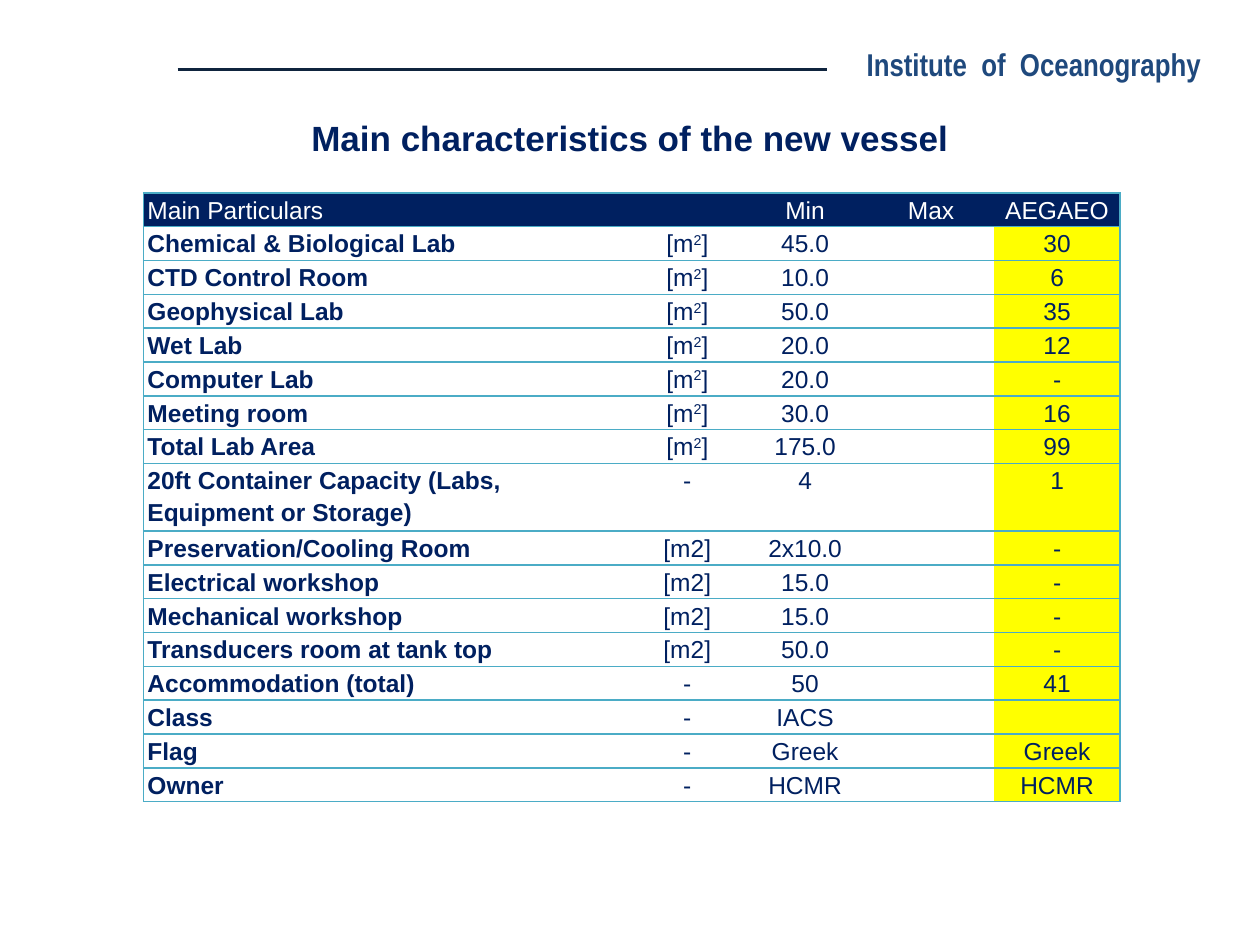
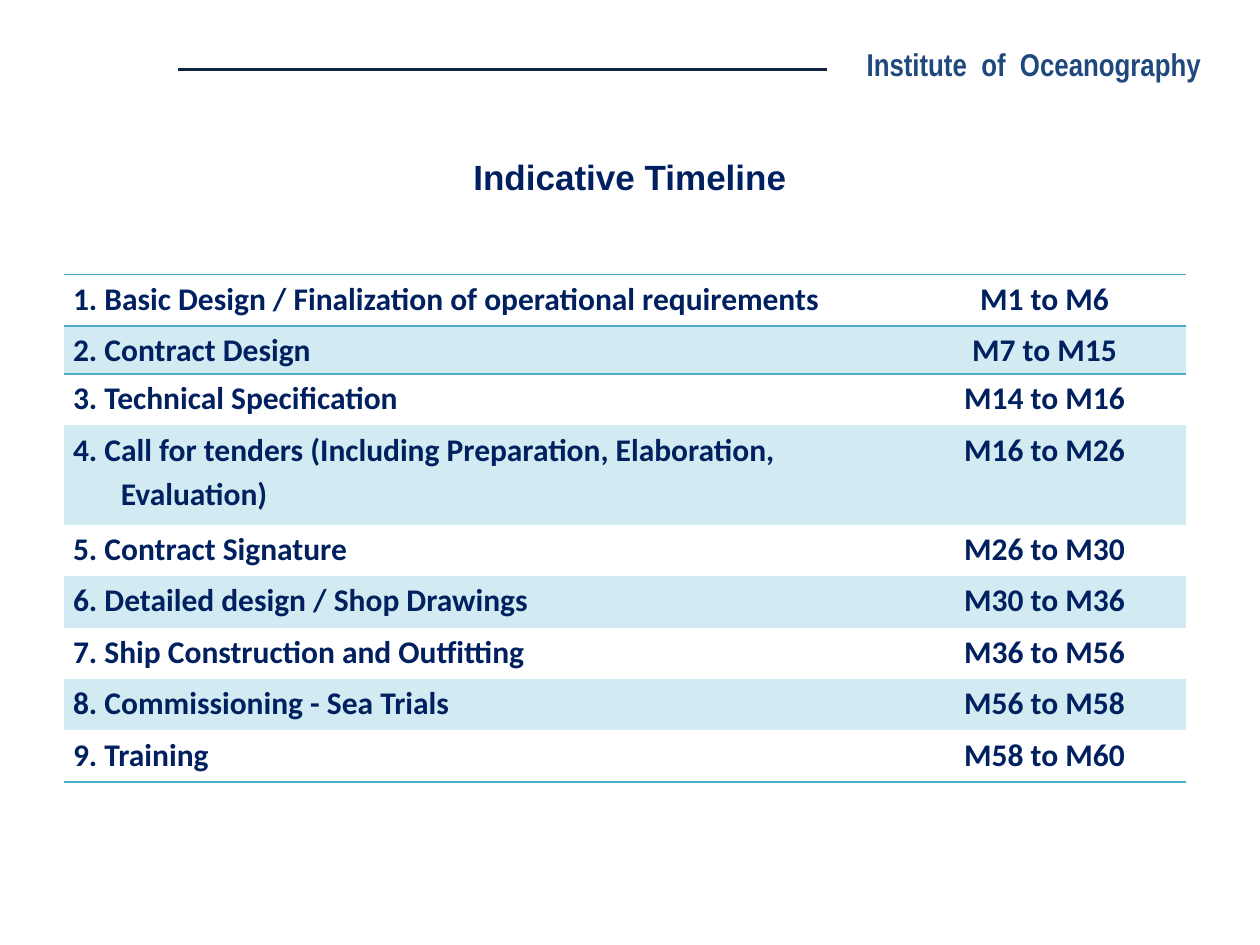
from dataclasses import dataclass

from lxml import etree
from pptx import Presentation
from pptx.dml.color import RGBColor
from pptx.enum.shapes import MSO_CONNECTOR
from pptx.enum.text import MSO_ANCHOR, MSO_AUTO_SIZE, PP_ALIGN
from pptx.oxml.ns import qn
from pptx.slide import Slide
from pptx.util import Inches, Pt

LEFT, CENTER = PP_ALIGN.LEFT, PP_ALIGN.CENTER
MIDDLE = MSO_ANCHOR.MIDDLE
GROW, FIXED = MSO_AUTO_SIZE.SHAPE_TO_FIT_TEXT, MSO_AUTO_SIZE.NONE
STRAIGHT = MSO_CONNECTOR.STRAIGHT

WIDTH, HEIGHT = Inches(10), Inches(7.5)
COLUMN, ROW = WIDTH / 100, HEIGHT / 75  # the slide is a grid of 100 by 75
LINE_SPACING = 1.15
PLAIN_TABLE_STYLE = "{2D5ABB26-0587-4C30-8999-92F81FD0307C}"

COLORS = {
    "navy": "002060",
    "institute": "1F497D",
    "rule": "0F243E",
    "border": "4BACC6",
    "band": "D2EAF1",
    "highlight": "FFFF00",
    "white": "FFFFFF",
}

INSTITUTE_FONT = {"name": "Arial Narrow", "size": Pt(18), "bold": True}
TITLE_FONT = {"name": "Arial", "size": Pt(20), "bold": True}
PARTICULARS_FONT = {"name": "Arial", "size": Pt(14)}
TIMELINE_FONT = {"name": "Calibri", "size": Pt(18), "bold": True}

# A caret raises the character after it.
PARTICULARS = [
    ("Main Particulars", "", "Min", "Max", "AEGAEO"),
    ("Chemical & Biological Lab", "[m^2]", "45.0", "", "30"),
    ("CTD Control Room", "[m^2]", "10.0", "", "6"),
    ("Geophysical Lab", "[m^2]", "50.0", "", "35"),
    ("Wet Lab", "[m^2]", "20.0", "", "12"),
    ("Computer Lab", "[m^2]", "20.0", "", "-"),
    ("Meeting room", "[m^2]", "30.0", "", "16"),
    ("Total Lab Area", "[m^2]", "175.0", "", "99"),
    ("20ft Container Capacity (Labs, Equipment or Storage)", "-", "4", "", "1"),
    ("Preservation/Cooling Room", "[m2]", "2x10.0", "", "-"),
    ("Electrical workshop", "[m2]", "15.0", "", "-"),
    ("Mechanical workshop", "[m2]", "15.0", "", "-"),
    ("Transducers room at tank top", "[m2]", "50.0", "", "-"),
    ("Accommodation (total)", "-", "50", "", "41"),
    ("Class", "-", "IACS", "", ""),
    ("Flag", "-", "Greek", "", "Greek"),
    ("Owner", "-", "HCMR", "", "HCMR"),
]

TIMELINE = [
    ("1. Basic Design / Finalization of operational requirements", "M1 to M6"),
    ("2. Contract Design", "M7 to M15"),
    ("3. Technical Specification", "M14 to M16"),
    ("4. Call for tenders (Including Preparation, Elaboration, Evaluation)",
     "M16 to M26"),
    ("5. Contract Signature", "M26 to M30"),
    ("6. Detailed design / Shop Drawings", "M30 to M36"),
    ("7. Ship Construction and Outfitting", "M36 to M56"),
    ("8. Commissioning - Sea Trials", "M56 to M58"),
    ("9. Training", "M58 to M60"),
]


@dataclass(frozen=True)
class Area:
    """A place on the slide, in grid columns and rows."""
    left: float
    top: float
    width: float
    height: float

    def lengths(self) -> tuple[int, int, int, int]:
        return (int(self.left * COLUMN), int(self.top * ROW),
                int(self.width * COLUMN), int(self.height * ROW))


@dataclass(frozen=True)
class Label:
    text: str
    area: Area
    font: dict
    color: str
    auto_size: MSO_AUTO_SIZE = FIXED


@dataclass(frozen=True)
class CellStyle:
    font: dict
    color: str = "navy"
    fill: str | None = None
    borders: str = ""  # any of L, R, T, B
    hanging: float = 0  # in grid columns
    side_margin: float = 0


INSTITUTE = Label("Institute  of  Oceanography", Area(64.1, 0, 35.9, 10.2),
                  INSTITUTE_FONT, "institute")


def apply_format(target, values: dict) -> None:
    for attribute, value in values.items():
        setattr(target, attribute, value)


def rgb(color: str) -> RGBColor:
    return RGBColor.from_string(COLORS[color])


def add_label(slide: Slide, label: Label) -> None:
    frame = slide.shapes.add_textbox(*label.area.lengths()).text_frame
    apply_format(frame, {"word_wrap": True, "vertical_anchor": MIDDLE,
                         "auto_size": label.auto_size})
    paragraph = frame.paragraphs[0]
    paragraph.alignment = CENTER
    run = paragraph.add_run()
    run.text = label.text
    apply_format(run.font, label.font)
    run.font.color.rgb = rgb(label.color)


def add_titled_slide(deck, title: str, title_top: float) -> Slide:
    """Add a slide with the institute's header and a title."""
    slide = deck.slides.add_slide(deck.slide_layouts[6])
    y = int(5.5 * ROW)
    rule = slide.shapes.add_connector(
        STRAIGHT, int(14.1 * COLUMN), y, int(65.6 * COLUMN), y)
    rule.line.color.rgb = rgb("rule")
    rule.line.width = Pt(1.5)
    etree.SubElement(rule._element.spPr, qn("a:effectLst"))
    add_label(slide, INSTITUTE)
    add_label(slide, Label(title, Area(0, title_top, 100, 4.4),
                           TITLE_FONT, "navy", GROW))
    return slide


def add_borders(cell, sides: str) -> None:
    properties = cell._tc.get_or_add_tcPr()
    for side in (side for side in "LRTB" if side in sides):
        line = etree.SubElement(properties, qn(f"a:ln{side}"), w=str(Pt(1)))
        solid = etree.SubElement(line, qn("a:solidFill"))
        etree.SubElement(solid, qn("a:srgbClr"), val=COLORS["border"])


def fill_cell(cell, text: str, align: PP_ALIGN, style: CellStyle) -> None:
    margin = int(style.side_margin * COLUMN)
    apply_format(cell, {"margin_left": margin, "margin_right": margin,
                        "margin_top": 0, "margin_bottom": 0})
    add_borders(cell, style.borders)
    if style.fill:
        cell.fill.solid()
        cell.fill.fore_color.rgb = rgb(style.fill)
    else:
        cell.fill.background()

    paragraph = cell.text_frame.paragraphs[0]
    apply_format(paragraph, {"alignment": align, "line_spacing": LINE_SPACING})
    if style.hanging:
        indent = int(style.hanging * COLUMN)
        properties = paragraph._p.get_or_add_pPr()
        properties.set("marL", str(indent))
        properties.set("indent", str(-indent))

    base, *raised = text.split("^")
    pieces = [(base, False)]
    for part in raised:
        pieces += [(part[:1], True), (part[1:], False)]
    for piece, is_raised in pieces:
        if piece:
            run = paragraph.add_run()
            run.text = piece
            apply_format(run.font, style.font)
            run.font.color.rgb = rgb(style.color)
            if is_raised:
                run._r.get_or_add_rPr().set("baseline", "30000")
    if not text:
        size = str(int(style.font["size"].pt * 100))
        etree.SubElement(paragraph._p, qn("a:endParaRPr"), sz=size)


def add_grid(slide: Slide, records: list, left: float, top: float,
             widths: list, heights: list, style_of) -> None:
    """Add a table; style_of(row, column) gives the style of each cell."""
    area = Area(left, top, sum(widths), sum(heights))
    table = slide.shapes.add_table(
        len(records), len(widths), *area.lengths()).table
    apply_format(table, {"first_row": False, "horz_banding": False})
    table._tbl.tblPr.find(qn("a:tableStyleId")).text = PLAIN_TABLE_STYLE
    for column, width in zip(table.columns, widths):
        column.width = int(width * COLUMN)
    for row, height in zip(table.rows, heights):
        row.height = int(height * ROW)
    for r, record in enumerate(records):
        for c, text in enumerate(record):
            fill_cell(table.cell(r, c), text, CENTER if c else LEFT,
                      style_of(r, c))


def particulars_style(row: int, column: int) -> CellStyle:
    is_header, is_last = row == 0, column == 4
    fill = "navy" if is_header else "highlight" if is_last else None
    return CellStyle(
        font=PARTICULARS_FONT | {"bold": column == 0 and not is_header},
        color="white" if is_header else "navy",
        fill=fill,
        borders="TB" + ("L" if column == 0 else "R" if is_last else ""),
        side_margin=0.3,
    )


def timeline_style(row: int, column: int) -> CellStyle:
    borders = {0: "TB", 1: "T", len(TIMELINE) - 1: "B"}
    return CellStyle(
        font=TIMELINE_FONT,
        fill="band" if row % 2 else None,
        borders=borders.get(row, ""),
        hanging=0 if column else 3.8,
        side_margin=0.7,
    )


def main() -> None:
    deck = Presentation()
    deck.slide_width, deck.slide_height = WIDTH, HEIGHT

    vessel = add_titled_slide(deck, "Main characteristics of the new vessel", 8.7)
    vessel_heights = [2.52] * len(PARTICULARS)
    vessel_heights[8] *= 2  # the container entry takes two lines
    add_grid(vessel, PARTICULARS, 11.4, 15.3, [38.8, 8.7, 10, 10, 10],
             vessel_heights, particulars_style)

    timeline = add_titled_slide(deck, "Indicative Timeline", 11.8)
    phase_heights = [4.08] * len(TIMELINE)
    phase_heights[1], phase_heights[3] = 3.8, 7.9
    add_grid(timeline, TIMELINE, 5.1, 21.8, [66.6, 22.4],
             phase_heights, timeline_style)

    deck.save("out.pptx")


if __name__ == "__main__":
    main()
